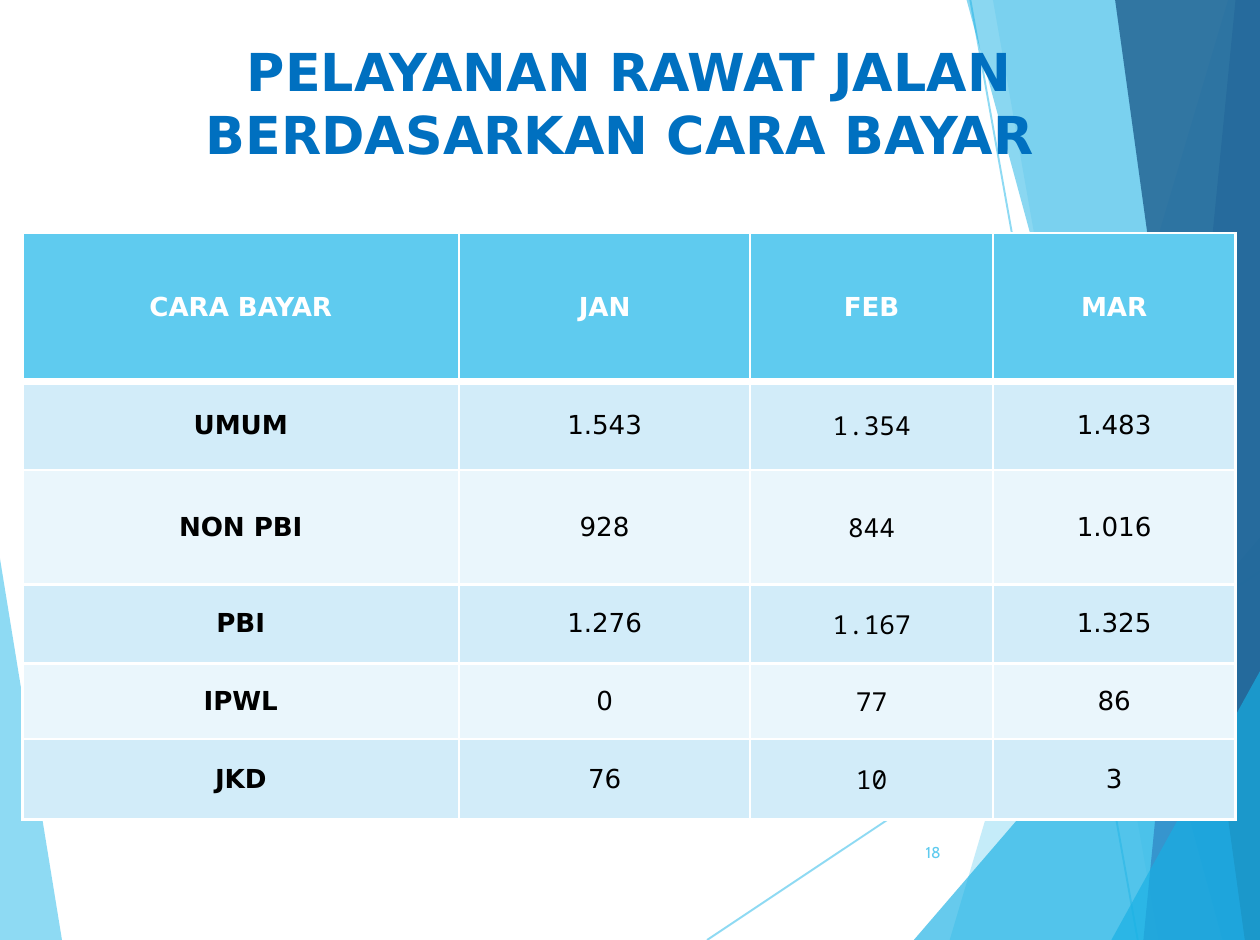
from dataclasses import dataclass

from lxml.etree import SubElement
from pptx import Presentation
from pptx.dml.color import RGBColor
from pptx.enum.text import MSO_ANCHOR, PP_ALIGN
from pptx.oxml.ns import qn
from pptx.util import Inches, Pt

SKY, AZURE, BLUE, NAVY = "5FCBEF", "17B0E4", "2E83C3", "226292"
TITLE_BLUE, WHITE, BLACK = "0070C0", "FFFFFF", "000000"
BANDS = ("D2ECF9", "EAF6FC")
SANS, MONO, NUMBER_FONT = "DejaVu Sans", "Noto Sans Mono", "Cabin"
WIDTH, HEIGHT = 6.7, 5


@dataclass(frozen=True)
class Facet:
    points: tuple
    color: str
    opacity: int


@dataclass(frozen=True)
class Ray:
    start: tuple
    end: tuple


@dataclass(frozen=True)
class TableRow:
    height: float
    texts: tuple


RAYS = (Ray((3.76, HEIGHT), (WIDTH, 3.04)), Ray((5.16, 0), (6.05, HEIGHT)))


def right_facet(top: float, bottom: float, color: str, opacity: int) -> Facet:
    """Describe a full-height facet that reaches the right edge."""
    points = ((top, 0), (bottom, HEIGHT), (WIDTH, HEIGHT), (WIDTH, 0))
    return Facet(points, color, opacity)


def corner_facet(left: float, top: float) -> Facet:
    """Describe a triangle in the lower right corner."""
    return Facet(((left, HEIGHT), (WIDTH, top), (WIDTH, HEIGHT)), AZURE, 66)


LEFT_FACET = Facet(((0, 2.97), (0.33, HEIGHT), (0, HEIGHT)), SKY, 70)
RIGHT_FACETS = (
    right_facet(6.53, 5.05, SKY, 36),
    right_facet(5.28, 6.16, SKY, 20),
    corner_facet(4.86, 2.86),
    right_facet(5.14, 6.5, AZURE, 50),
    right_facet(6.57, 6.08, BLUE, 70),
    right_facet(5.93, 6.62, NAVY, 82),
    corner_facet(5.91, 3.57),
)

COLUMN_WIDTHS = (2.32, 1.55, 1.29, 1.29)
ROWS = (
    TableRow(0.79, ("CARA BAYAR", "JAN", "FEB", "MAR")),
    TableRow(0.47, ("UMUM", "1.543", "1.354", "1.483")),
    TableRow(0.61, ("NON PBI", "928", "844", "1.016")),
    TableRow(0.42, ("PBI", "1.276", "1.167", "1.325")),
    TableRow(0.4, ("IPWL", "0", "77", "86")),
    TableRow(0.43, ("JKD", "76", "10", "3")),
)


def rgb(color: str) -> RGBColor:
    return RGBColor.from_string(color)


def set_opacity(fill_owner, opacity: int) -> None:
    color = next(fill_owner.iter(qn("a:srgbClr")))
    SubElement(color, qn("a:alpha"), val=str(opacity * 1000))


def format_text(text_frame, size: float, font: str, color: str,
                bold: bool = False, align=PP_ALIGN.CENTER) -> None:
    for paragraph in text_frame.paragraphs:
        paragraph.alignment = align
        for run in paragraph.runs:
            run.font.size = Pt(size)
            run.font.name = font
            run.font.bold = bold
            run.font.color.rgb = rgb(color)


def draw_facet(slide, facet: Facet) -> None:
    points = [(Inches(x), Inches(y)) for x, y in facet.points]
    builder = slide.shapes.build_freeform(*points[0])
    builder.add_line_segments(points[1:], close=True)
    shape = builder.convert_to_shape()
    shape.shadow.inherit = False
    shape.fill.solid()
    shape.fill.fore_color.rgb = rgb(facet.color)
    shape.line.fill.background()
    set_opacity(shape.element.spPr, facet.opacity)


def draw_ray(slide, ray: Ray) -> None:
    ends = [Inches(value) for value in ray.start + ray.end]
    connector = slide.shapes.add_connector(1, *ends)
    connector.line.color.rgb = rgb(SKY)
    connector.line.width = Pt(0.75)
    properties = connector.element.spPr
    set_opacity(properties, 70)
    SubElement(properties, qn("a:effectLst"))


def draw_title(slide) -> None:
    title = slide.shapes.title
    slide.shapes.element.append(title.element)  # in front of the facets
    title.left, title.top = Inches(0.38), Inches(0.16)
    title.width, title.height = Inches(6.03), Inches(1.07)
    text_frame = title.text_frame
    text_frame.text = "PELAYANAN RAWAT JALAN\vBERDASARKAN CARA BAYAR "
    text_frame.vertical_anchor = MSO_ANCHOR.TOP
    text_frame.margin_right = Inches(0.2)
    format_text(text_frame, 20, SANS, TITLE_BLUE, bold=True)
    text_frame.paragraphs[0].line_spacing = 1.0
    text_frame.paragraphs[0].space_before = Pt(0)


def set_borders(cell, top: float, bottom: float) -> None:
    properties = cell._tc.get_or_add_tcPr()
    for side, width in (("L", 1), ("R", 1), ("T", top), ("B", bottom)):
        line = SubElement(properties, qn(f"a:ln{side}"), w=str(Pt(width)))
        SubElement(SubElement(line, qn("a:solidFill")), qn("a:srgbClr"), val=WHITE)


def draw_cell(cell, text: str, row: int, column: int) -> None:
    header = row == 0
    set_borders(cell, 3 if row == 1 else 1, 3 if header else 1)
    cell.fill.solid()
    cell.fill.fore_color.rgb = rgb(SKY if header else BANDS[(row - 1) % 2])
    cell.vertical_anchor = MSO_ANCHOR.MIDDLE
    if not header and column >= 2:
        cell.margin_left = cell.margin_right = 0
        cell.margin_top = cell.margin_bottom = 0
    cell.text_frame.text = text
    font = MONO if column == 2 and not header else SANS
    format_text(cell.text_frame, 10, font, WHITE if header else BLACK,
                bold=header or column == 0)


def draw_payment_table(slide) -> None:
    frame = slide.shapes.add_table(
        len(ROWS), len(COLUMN_WIDTHS), Inches(0.12), Inches(1.24),
        Inches(sum(COLUMN_WIDTHS)), Inches(sum(row.height for row in ROWS)))
    table = frame.table
    for column, width in zip(table.columns, COLUMN_WIDTHS):
        column.width = Inches(width)
    for row_index, row in enumerate(ROWS):
        table.rows[row_index].height = Inches(row.height)
        for column_index, text in enumerate(row.texts):
            draw_cell(table.cell(row_index, column_index), text, row_index, column_index)


def draw_slide_number(slide) -> None:
    box = slide.shapes.add_textbox(Inches(4.72), Inches(4.4), Inches(0.38), Inches(0.27))
    text_frame = box.text_frame
    text_frame.word_wrap = True
    text_frame.vertical_anchor = MSO_ANCHOR.MIDDLE
    text_frame.text = "18"
    format_text(text_frame, 6, NUMBER_FONT, SKY, align=PP_ALIGN.RIGHT)


def main() -> None:
    presentation = Presentation()
    presentation.slide_width, presentation.slide_height = Inches(WIDTH), Inches(HEIGHT)
    slide = presentation.slides.add_slide(presentation.slide_layouts[5])
    draw_facet(slide, LEFT_FACET)
    for ray in RAYS:
        draw_ray(slide, ray)
    for facet in RIGHT_FACETS:
        draw_facet(slide, facet)
    draw_title(slide)
    draw_payment_table(slide)
    draw_slide_number(slide)
    presentation.save("out.pptx")


if __name__ == "__main__":
    main()
